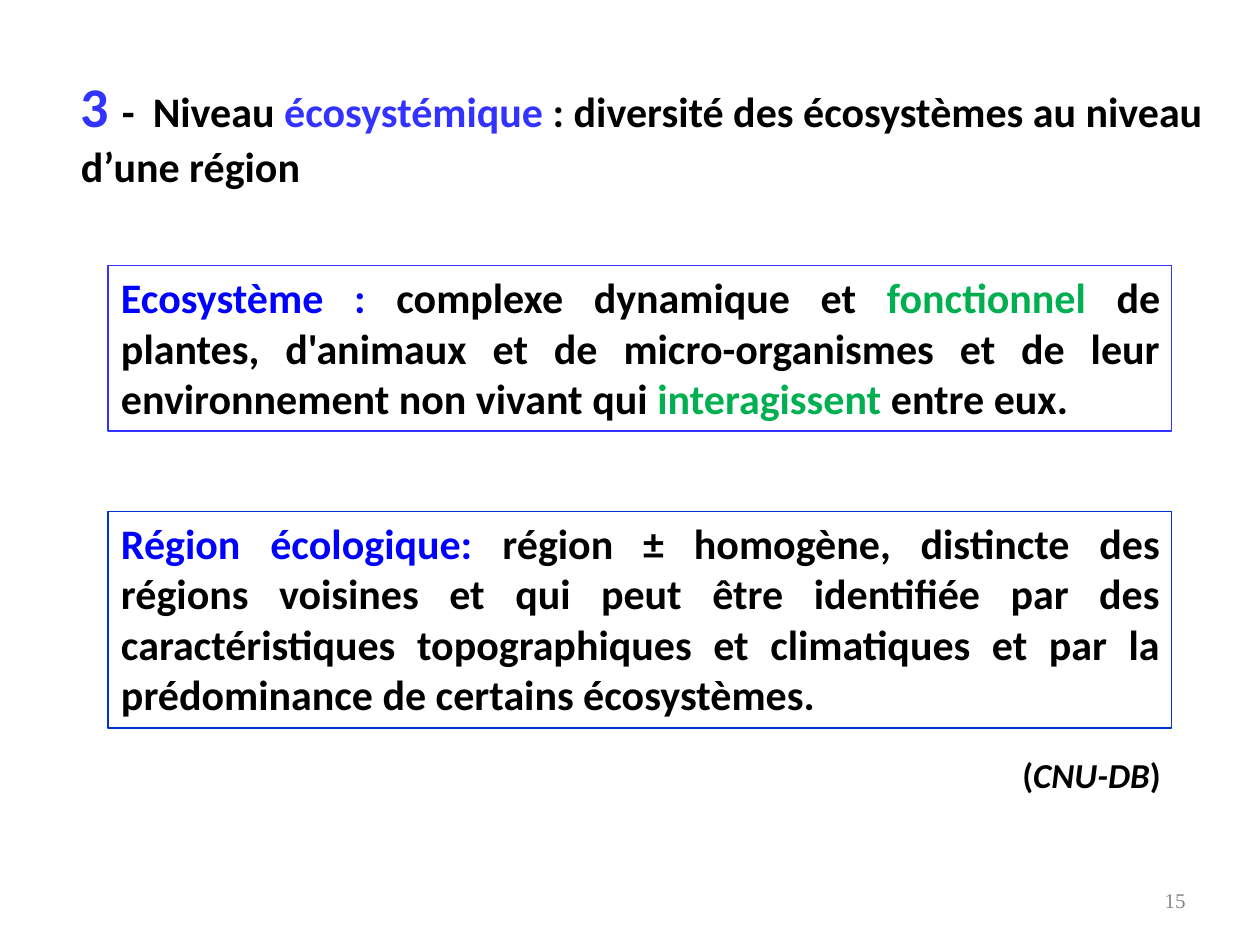
from dataclasses import dataclass

from lxml import etree
from pptx import Presentation
from pptx import util as u
from pptx.dml.color import RGBColor
from pptx.enum import shapes, text
from pptx.oxml.ns import qn

COLORS = {
    "black": "000000",
    "accent": "3333FF",
    "term": "0000FF",
    "keyword": "00AF50",
    "region": "0033CC",
    "gray": "888888",
}
BOX_LEFT, BOX_WIDTH = 2.18, 21.44


@dataclass
class Span:
    content: str
    color: str = "black"
    size: float | None = None
    italic: bool | None = None


@dataclass
class Definition:
    top: float
    height: float
    border: str
    spans: list[Span]


HEADING = [
    Span("3 ", "accent", size=32),
    Span("-\tNiveau "),
    Span("écosystémique ", "accent"),
    Span(": diversité des écosystèmes au niveau d’une région"),
]
DEFINITIONS = [
    Definition(5.36, 3.33, "accent", [
        Span("Ecosystème : ", "term"),
        Span("complexe dynamique et "),
        Span("fonctionnel ", "keyword"),
        Span("de plantes, d'animaux et de micro-organismes et de leur "
             "environnement non vivant qui "),
        Span("interagissent ", "keyword"),
        Span("entre eux."),
    ]),
    Definition(10.31, 4.37, "region", [
        Span("Région écologique: ", "term"),
        Span("région ± homogène, distincte des régions voisines et qui peut "
             "être identifiée par des caractéristiques topographiques et "
             "climatiques et par la prédominance de certains écosystèmes."),
    ]),
]
SOURCE = [Span("("), Span("CNU-DB", italic=True), Span(")")]


def rgb(name: str) -> RGBColor:
    return RGBColor.from_string(COLORS[name])


def prepare_frame(shape, left: float = 0, top: float = 0, right: float = 0):
    frame = shape.text_frame
    frame.word_wrap = True
    frame.auto_size = text.MSO_AUTO_SIZE.NONE
    frame.vertical_anchor = text.MSO_ANCHOR.TOP
    frame.margin_left, frame.margin_right = u.Cm(left), u.Cm(right)
    frame.margin_top, frame.margin_bottom = u.Cm(top), 0
    return frame


def write(paragraph, spans: list[Span], size: float, align,
          name: str = "Calibri", bold: bool = True) -> None:
    paragraph.alignment = align
    paragraph.space_before = u.Pt(0)
    paragraph.font.name = name
    paragraph.font.size = u.Pt(size)
    paragraph.font.bold = bold
    for span in spans:
        run = paragraph.add_run()
        run.text = span.content
        run.font.color.rgb = rgb(span.color)
        run.font.italic = span.italic
        if span.size:
            run.font.size = u.Pt(span.size)


def add_heading(slide) -> None:
    title = slide.shapes.title
    title.left, title.top = u.Cm(1.63), u.Cm(1.37)
    title.width, title.height = u.Cm(23.1), u.Cm(2.46)
    paragraph = prepare_frame(title).paragraphs[0]
    tabs = etree.SubElement(paragraph._p.get_or_add_pPr(), qn("a:tabLst"))
    etree.SubElement(tabs, qn("a:tab"), pos=str(u.Cm(1.45)), algn="l")
    paragraph.line_spacing = 1.05
    write(paragraph, HEADING, 24, text.PP_ALIGN.LEFT)


def add_definition(slide, definition: Definition) -> None:
    shape = slide.shapes.add_shape(
        shapes.MSO_SHAPE.RECTANGLE, u.Cm(BOX_LEFT), u.Cm(definition.top),
        u.Cm(BOX_WIDTH), u.Cm(definition.height))
    shape.shadow.inherit = False
    shape.fill.background()
    shape.line.color.rgb = rgb(definition.border)
    shape.line.width = u.Pt(0.75)
    paragraph = prepare_frame(shape, 0.26, 0.12, 0.23).paragraphs[0]
    paragraph.line_spacing = u.Pt(28.8)
    write(paragraph, definition.spans, 24, text.PP_ALIGN.JUSTIFY)


def add_label(slide, left: float, top: float, width: float, height: float,
              spans: list[Span], size: float, **style) -> None:
    box = slide.shapes.add_textbox(
        u.Cm(left), u.Cm(top), u.Cm(width), u.Cm(height))
    write(prepare_frame(box).paragraphs[0], spans, size,
          text.PP_ALIGN.RIGHT, **style)


def main() -> None:
    presentation = Presentation()
    presentation.slide_width = u.Cm(25.4)
    presentation.slide_height = u.Cm(19.05)
    slide = presentation.slides.add_slide(presentation.slide_layouts[5])
    add_heading(slide)
    for definition in DEFINITIONS:
        add_definition(slide, definition)
    add_label(slide, 19.4, 15.19, 4, 0.9, SOURCE, 20)
    add_label(slide, 23.2, 17.9, 0.7, 0.53, [Span("15", "gray")], 12,
              name="Times New Roman", bold=False)
    presentation.save("out.pptx")


if __name__ == "__main__":
    main()
